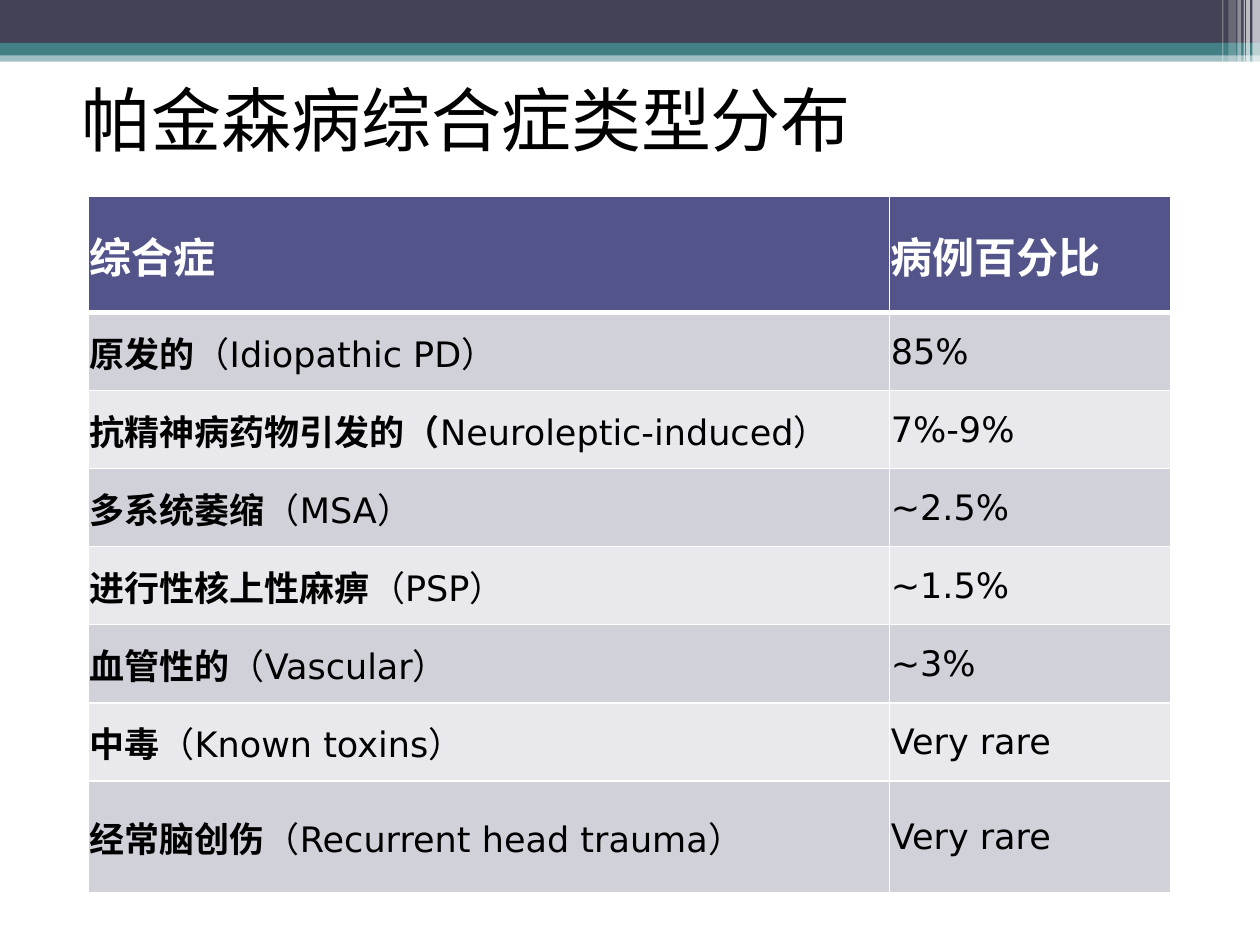
from dataclasses import dataclass

from lxml.etree import SubElement
from pptx import Presentation
from pptx.dml.color import RGBColor
from pptx.enum.shapes import MSO_SHAPE
from pptx.enum.text import MSO_ANCHOR
from pptx.oxml import parse_xml
from pptx.oxml.ns import nsdecls, qn
from pptx.util import Inches, Pt

COLUMNS, ROWS = 100, 75


@dataclass(frozen=True)
class Theme:
    ink: str = "000000"
    paper: str = "FFFFFF"
    slate: str = "424456"
    teal: str = "438086"
    header: str = "53548A"
    bands: tuple = ("D1D1DA", "E9E9ED")
    chinese: str = "Noto Sans CJK SC"
    latin: str = "DejaVu Sans"
    title_size: int = 40
    header_size: int = 24
    body_size: int = 20
    rule: int = 1
    header_rule: int = 3


def add_run(paragraph, text, *, font, size, color, bold=False):
    run = paragraph.add_run()
    run.text = text
    run.font.size = Pt(size)
    run.font.bold = bold
    run.font.color.rgb = RGBColor.from_string(color)
    run.font.name = font
    SubElement(run.font._element, qn("a:ea"), typeface=font)


def set_borders(cell, color, **widths):
    """Draw the cell's borders; widths are points keyed L, R, T and B."""
    properties = cell._tc.get_or_add_tcPr()
    for place, (side, width) in enumerate(widths.items()):
        properties.insert(place, parse_xml(
            f'<a:ln{side} {nsdecls("a")} w="{Pt(width)}"><a:solidFill>'
            f'<a:srgbClr val="{color}"/></a:solidFill></a:ln{side}>'))


class SlideBuilder:
    def __init__(self, presentation, theme):
        self.theme = theme
        self.column = presentation.slide_width / COLUMNS
        self.row = presentation.slide_height / ROWS
        self.slide = presentation.slides.add_slide(presentation.slide_layouts[6])

    def box(self, left, top, width, height):
        """Turn grid columns and rows into slide lengths."""
        return (round(left * self.column), round(top * self.row),
                round(width * self.column), round(height * self.row))

    def bar(self, left, top, width, height, color, opacity=100):
        bar = self.slide.shapes.add_shape(
            MSO_SHAPE.RECTANGLE, *self.box(left, top, width, height))
        bar.shadow.inherit = False
        bar.line.fill.background()
        bar.fill.solid()
        bar.fill.fore_color.rgb = RGBColor.from_string(color)
        if opacity < 100:
            tint = bar._element.spPr.find(".//" + qn("a:srgbClr"))
            SubElement(tint, qn("a:alpha"), val=str(opacity * 1000))

    def title(self, text, left, top, width, height):
        frame = self.slide.shapes.add_textbox(
            *self.box(left, top, width, height)).text_frame
        frame.word_wrap = True
        frame.vertical_anchor = MSO_ANCHOR.MIDDLE
        add_run(frame.paragraphs[0], text, font=self.theme.chinese,
                size=self.theme.title_size, color=self.theme.ink)

    def cell(self, cell, runs, row_index):
        """Fill one cell; runs are (text, font, bold) triples."""
        theme = self.theme
        is_header = row_index == 0
        cell.margin_left = cell.margin_top = cell.margin_right = Inches(0.01)
        cell.margin_bottom = 0
        cell.vertical_anchor = MSO_ANCHOR.MIDDLE
        cell.fill.solid()
        cell.fill.fore_color.rgb = RGBColor.from_string(
            theme.header if is_header else theme.bands[(row_index - 1) % 2])
        set_borders(cell, theme.paper, L=theme.rule, R=theme.rule,
                    T=theme.header_rule if row_index == 1 else theme.rule,
                    B=theme.header_rule if is_header else theme.rule)
        for text, font, bold in runs:
            add_run(cell.text_frame.paragraphs[0], text, font=font, bold=bold,
                    size=theme.header_size if is_header else theme.body_size,
                    color=theme.paper if is_header else theme.ink)

    def table(self, content, left, top, widths, heights):
        table = self.slide.shapes.add_table(
            len(heights), len(widths),
            *self.box(left, top, sum(widths), sum(heights))).table
        table.horz_banding = False
        for column, width in zip(table.columns, widths):
            column.width = round(width * self.column)
        for row_index, (row, height) in enumerate(zip(table.rows, heights)):
            row.height = round(height * self.row)
            for cell, runs in zip(row.cells, content[row_index]):
                self.cell(cell, runs, row_index)


# Chinese name, opening bracket is bold, English name, share of cases
SYNDROMES = [
    ("原发的", False, "Idiopathic PD", "85%"),
    ("抗精神病药物引发的", True, "Neuroleptic-induced", "7%-9%"),
    ("多系统萎缩", False, "MSA", "~2.5%"),
    ("进行性核上性麻痹", False, "PSP", "~1.5%"),
    ("血管性的", False, "Vascular", "~3%"),
    ("中毒", False, "Known toxins", "Very rare"),
    ("经常脑创伤", False, "Recurrent head trauma", "Very rare"),
]

# left, width, height, opacity
STRIPES = [
    (99.4, 0.6, 6.8, 65), (98.9, 0.3, 6.8, 65), (98.7, 0.1, 6.8, 60),
    (98.2, 0.3, 6.8, 40), (97.5, 0.6, 6.4, 20), (97, 0.1, 6.4, 30),
]


def syndrome_rows(theme):
    yield [[(heading, theme.chinese, True)] for heading in ("综合症", "病例百分比")]
    for chinese, bold_bracket, english, share in SYNDROMES:
        name = [(chinese, theme.chinese, True), ("（", theme.chinese, bold_bracket),
                (english, theme.latin, False), ("）", theme.chinese, False)]
        yield [name, [(share, theme.latin, False)]]


def main():
    presentation = Presentation()
    presentation.slide_width, presentation.slide_height = Inches(10), Inches(7.5)
    theme = Theme()
    builder = SlideBuilder(presentation, theme)

    builder.bar(0, 4, COLUMNS, 0.9, theme.teal, opacity=50)
    builder.bar(0, 0, COLUMNS, 3.4, theme.slate)
    builder.bar(0, 3.4, COLUMNS, 1, theme.teal)
    for left, width, height, opacity in STRIPES:
        builder.bar(left, 0, width, height, theme.paper, opacity)

    builder.table(list(syndrome_rows(theme)), left=7, top=15.6,
                  widths=[63.6, 22.3], heights=[9.2] + [6.2] * 6 + [8.9])
    builder.title("帕金森病综合症类型分布", 5.5, 4.7, 71.3, 9.4)
    presentation.save("out.pptx")


if __name__ == "__main__":
    main()
